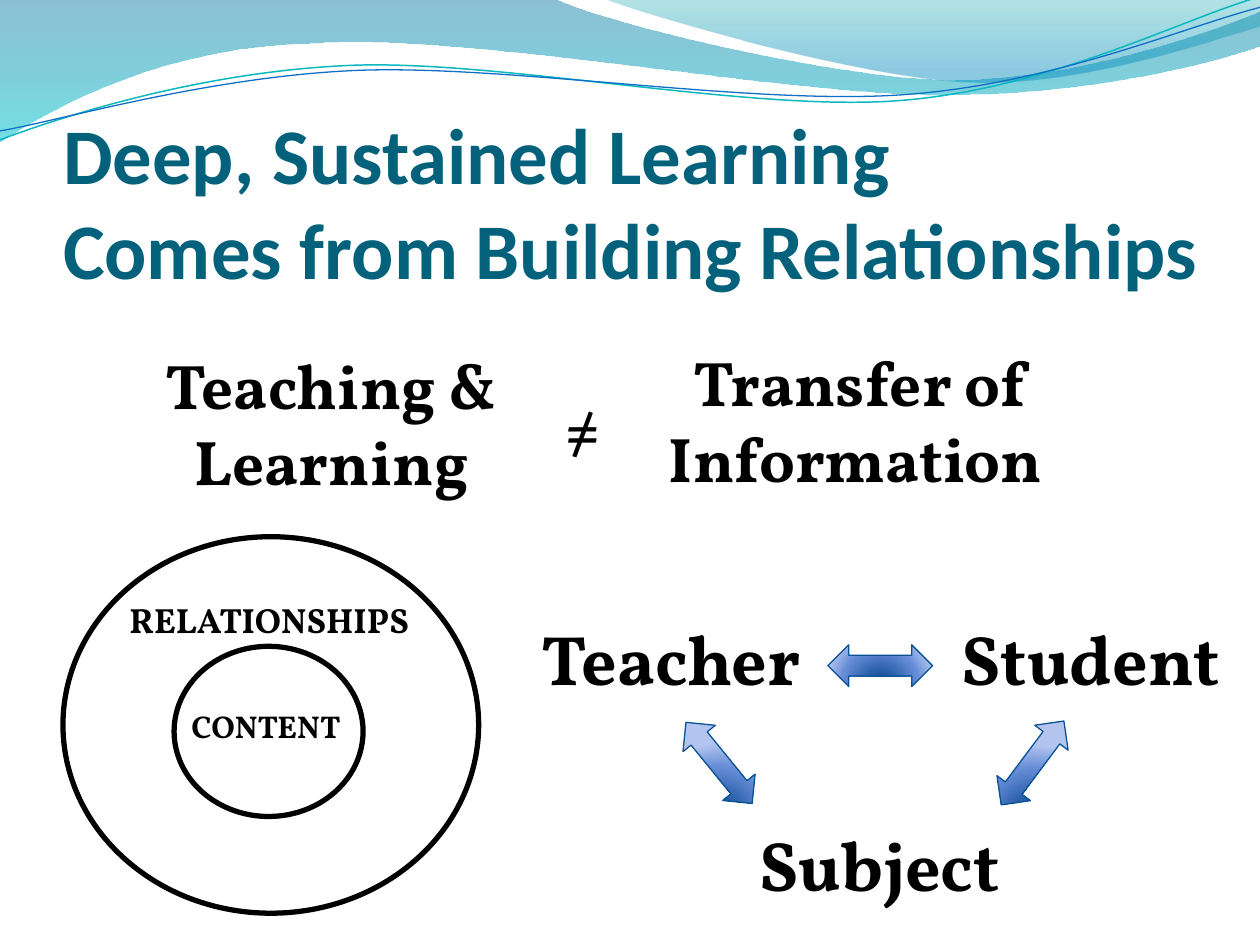
"""Build a slide on learning through relationships."""
from lxml.etree import SubElement
from pptx import Presentation
from pptx.dml.color import RGBColor
from pptx.enum.shapes import MSO_SHAPE as Shape
from pptx.enum.text import MSO_ANCHOR as Anchor, MSO_AUTO_SIZE as AutoSize, PP_ALIGN as Align
from pptx.oxml import parse_xml
from pptx.oxml.ns import nsdecls, qn
from pptx.util import Cm, Pt

COLORS = {
    "title": "04617B", "text": "000000", "arrow_line": "095295",
    "teal_line": "0AB8BF", "blue_line": "0F6FC6",
    "band_top": "0074A1", "band_bottom": "00C6CF",
    "crest_top": "00A1A9", "crest_bottom": "008BBF",
    "arrow_dark": "003D87", "arrow_middle": "668DD7", "arrow_light": "B3C4EF",
}
LINEAR = '<a:lin ang="5400000" scaled="0"/>'
RADIAL = '<a:path path="circle"><a:fillToRect l="50000" t="130000" r="50000" b="-30000"/></a:path>'
ARROW_STOPS = [(0, "arrow_dark", 100), (68, "arrow_middle", 100), (100, "arrow_light", 100)]


class SlideBuilder:
    """Hold the slide and its style, and add each kind of element."""

    heading_font = "Calibri"
    body_font = "Vollkorn"

    def __init__(self, slide):
        self.slide = slide

    def style_font(self, paragraph, name, size, color):
        """Set the bold font of a paragraph."""
        font = paragraph.font
        font.name, font.size, font.bold = name, Pt(size), True
        font.color.rgb = RGBColor.from_string(COLORS[color])

    def outline(self, shape, color, width):
        """Give a shape a solid outline."""
        shape.line.color.rgb = RGBColor.from_string(COLORS[color])
        shape.line.width = Pt(width)

    def gradient(self, shape, stops, direction):
        """Fill a shape with gradient stops of position, colour and opacity."""
        stop_xml = "".join(
            f'<a:gs pos="{position * 1000}"><a:srgbClr val="{COLORS[color]}">'
            f'<a:alpha val="{opacity * 1000}"/></a:srgbClr></a:gs>'
            for position, color, opacity in stops)
        shape.fill.background()
        properties = shape.element.spPr
        properties.replace(properties.find(qn("a:noFill")), parse_xml(
            f'<a:gradFill {nsdecls("a")} rotWithShape="1"><a:gsLst>{stop_xml}</a:gsLst>{direction}</a:gradFill>'))

    def title(self, text, left, top, width, height):
        """Place and format the title in front of the waves."""
        title = self.slide.shapes.title
        title.element.getparent().append(title.element)
        title.left, title.top, title.width, title.height = map(Cm, (left, top, width, height))
        frame = title.text_frame
        frame.text = text
        frame.word_wrap, frame.auto_size, frame.vertical_anchor = True, AutoSize.NONE, Anchor.BOTTOM
        frame.margin_left = frame.margin_right = frame.margin_bottom = 0
        frame.margin_top = Cm(0.13)
        paragraph = frame.paragraphs[0]
        paragraph.alignment = Align.LEFT
        self.style_font(paragraph, self.heading_font, 45, "title")

    def wave(self, start, pieces, closed):
        """Add an outline whose three-point pieces are cubic curves."""
        points = [(round(x * 100), round(y * 100)) for x, y in [start, *sum(pieces, [])]]
        builder = self.slide.shapes.build_freeform(*points[0], scale=Cm(0.01))
        builder.add_line_segments(points[1:], close=closed)
        shape = builder.convert_to_shape()
        segments = iter(list(shape.element.iter(qn("a:lnTo"))))
        for piece in pieces:
            lines = [next(segments) for _ in piece]
            if len(lines) == 3:
                curve = SubElement(lines[0].getparent(), qn("a:cubicBezTo"))
                lines[0].addprevious(curve)
                for line in lines:
                    curve.append(line[0])
                    line.getparent().remove(line)
        shape.shadow.inherit = False
        shape.fill.background()
        shape.line.fill.background()
        return shape

    def band(self, start, pieces, stops):
        """Add a filled wave."""
        self.gradient(self.wave(start, pieces, True), stops, LINEAR)

    def wave_line(self, start, pieces, color, width):
        """Add a thin wave line."""
        self.outline(self.wave(start, pieces, False), color, width)

    def label(self, text, left, top, width, height, size, align=Align.CENTER, wrap=True):
        """Add a bold text box."""
        frame = self.slide.shapes.add_textbox(*map(Cm, (left, top, width, height))).text_frame
        frame.text = text
        frame.word_wrap, frame.auto_size = wrap, AutoSize.SHAPE_TO_FIT_TEXT
        paragraph = frame.paragraphs[0]
        paragraph.alignment = align
        self.style_font(paragraph, self.body_font, size, "text")

    def preset(self, kind, left, top, width, height):
        """Add a preset shape without shadow."""
        shape = self.slide.shapes.add_shape(kind, *map(Cm, (left, top, width, height)))
        shape.shadow.inherit = False
        return shape

    def ring(self, left, top, width, height):
        """Add an unfilled ellipse."""
        shape = self.preset(Shape.OVAL, left, top, width, height)
        shape.fill.background()
        self.outline(shape, "text", 3)

    def double_arrow(self, left, top, rotation):
        """Add a shaded two-headed arrow."""
        shape = self.preset(Shape.LEFT_RIGHT_ARROW, left, top, 2.11, 0.84)
        shape.rotation = rotation
        self.gradient(shape, ARROW_STOPS, RADIAL)
        self.outline(shape, "arrow_line", 0.75)


def main():
    """Build and save the slide."""
    presentation = Presentation()
    presentation.slide_width, presentation.slide_height = Cm(25.4), Cm(19.05)
    builder = SlideBuilder(presentation.slides.add_slide(presentation.slide_layouts[5]))

    builder.band((0, 0), [
        [(11.18, -0.03)],
        [(12.09, 0.43), (16.87, 1.6), (19.25, 1.6)],
        [(21.67, 1.6), (24.33, 0.66), (25.4, 0.23)],
        [(25.43, 0.91)],
        [(24.97, 1.12), (22.1, 1.93), (18.95, 1.91)],
        [(15.75, 1.91), (9.7, 0.71), (6.53, 0.86)],
        [(3.28, 0.91), (1.17, 2.11), (-0.03, 2.87)],
    ], [(0, "band_top", 45), (100, "band_bottom", 55)])
    builder.band((12.17, -0.03), [
        [(12.93, 0.28), (17.32, 1.57), (19.53, 1.65)],
        [(21.74, 1.75), (24.41, 0.81), (25.4, 0.53)],
        [(25.4, 0)],
    ], [(0, "crest_top", 30), (80, "crest_bottom", 45)])
    builder.wave_line((0, 2.82), [
        [(1.22, 2.36), (4.01, 1.45), (7.04, 1.32)],
        [(10.03, 1.19), (15.06, 2.26), (18.11, 2.03)],
        [(21.16, 1.8), (23.83, 0.38), (25.35, -0.05)],
    ], "teal_line", 0.85)
    builder.wave_line((0, 2.64), [
        [(1.19, 2.44), (4.17, 1.55), (7.19, 1.42)],
        [(10.24, 1.3), (15.16, 2.13), (18.21, 1.91)],
        [(21.23, 1.7), (23.9, 0.53), (25.4, 0.15)],
    ], "blue_line", 0.75)

    builder.title("Deep, Sustained Learning \vComes from Building Relationships", 1.27, 2.77, 24.13, 3.18)
    for text, left, top, width in (("Student", 19.08, 12.29, 5.82), ("Teacher", 10.57, 12.29, 5.92),
                                   ("Subject", 14.99, 16.43, 5.49)):
        builder.label(text, left, top, width, 1.96, 40, wrap=False)
    for left, top, rotation in ((16.69, 13, 0), (13.44, 14.96, 50.8), (19.76, 14.96, 126.8)):
        builder.double_arrow(left, top, rotation)

    builder.ring(1.27, 10.82, 8.38, 7.59)
    builder.label("RELATIONSHIPS", 2.36, 11.94, 6.48, 1.12, 20, Align.LEFT)
    builder.ring(3.51, 13.03, 3.81, 3.43)
    builder.label("CONTENT", 3.61, 14.12, 3.76, 1.02, 18, Align.LEFT)

    builder.label("≠", 11.15, 7.7, 1.63, 1.8, 36, Align.LEFT)
    builder.label("Teaching & Learning", 2.67, 6.86, 8.03, 3.33, 36)
    builder.label("Transfer of Information ", 12.19, 6.81, 10.36, 3.33, 36)
    presentation.save("out.pptx")


if __name__ == "__main__":
    main()
